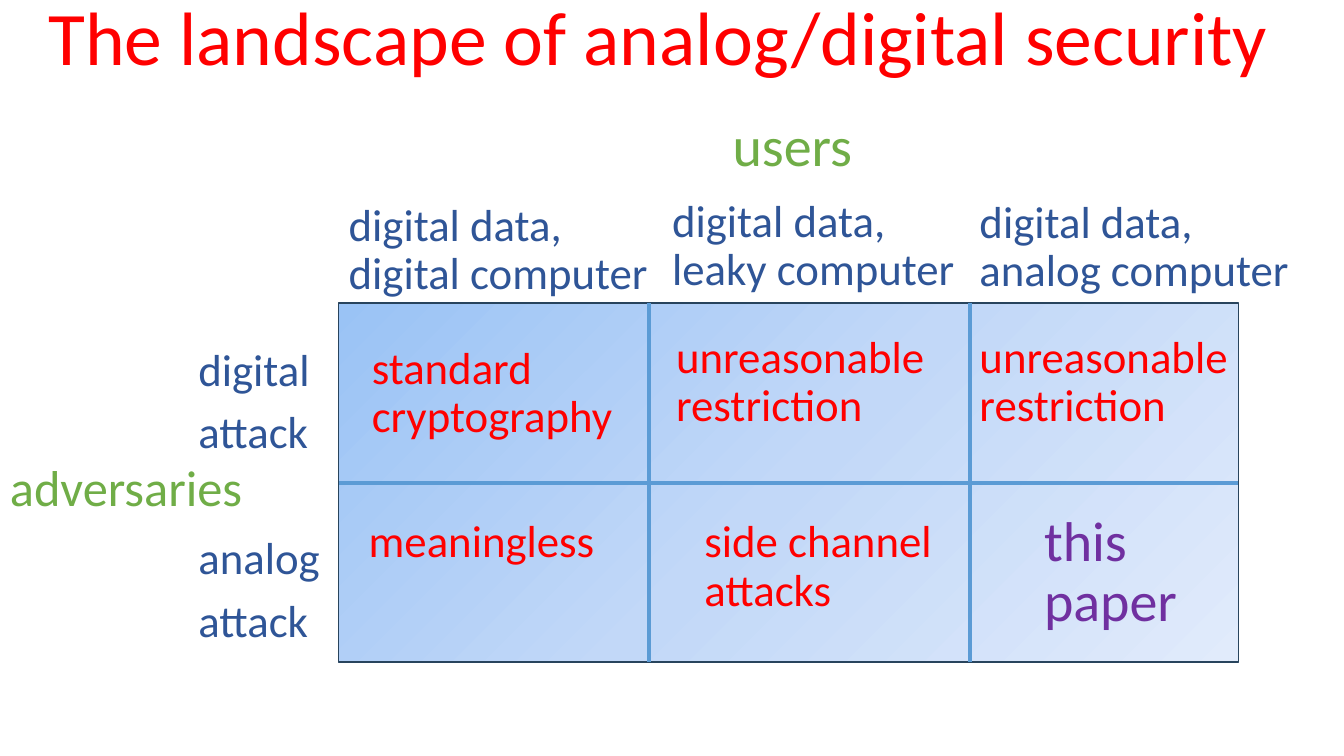
from copy import deepcopy
from dataclasses import dataclass

from lxml import etree
from pptx import Presentation
from pptx import util as u
from pptx.dml import color
from pptx.enum import shapes, text
from pptx.oxml import ns

RED, GREEN, NAVY, PURPLE = "FF0000", "70AD47", "2F5597", "7030A0"
RULE_BLUE, BORDER = "5B9BD5", "28445D"
GRADIENT = ("9AC3F5", "C2D8F8", "E1EBFB")
GRID_LEFT, GRID_TOP, GRID_WIDTH, GRID_HEIGHT = 242, 216.5, 642.5, 256.5
COLUMN_EDGES = (463.7, 692.6)


@dataclass
class Label:
    wording: str
    left: float
    top: float
    width: float
    height: float = 79
    size: float = 32
    colour: str = RED
    space_before: float = 10
    anchor: text.MSO_ANCHOR = text.MSO_ANCHOR.TOP


def rgb(code: str) -> color.RGBColor:
    return color.RGBColor.from_string(code)


def draw_label(slide, label: Label) -> None:
    box = slide.shapes.add_textbox(
        *(u.Pt(v) for v in (label.left, label.top, label.width, label.height)))
    frame = box.text_frame
    frame.word_wrap = True
    frame.vertical_anchor = label.anchor
    frame.text = label.wording
    paragraph_format = {"line_spacing": 0.9, "space_before": u.Pt(label.space_before)}
    font_format = {"name": "Calibri", "size": u.Pt(label.size)}
    for paragraph in frame.paragraphs:
        for key, value in paragraph_format.items():
            setattr(paragraph, key, value)
        for run in paragraph.runs:
            for key, value in font_format.items():
                setattr(run.font, key, value)
            run.font.color.rgb = rgb(label.colour)


def draw_grid(slide):
    grid = slide.shapes.add_shape(
        shapes.MSO_SHAPE.RECTANGLE,
        *(u.Pt(v) for v in (GRID_LEFT, GRID_TOP, GRID_WIDTH, GRID_HEIGHT)))
    grid.shadow.inherit = False
    grid.line.color.rgb = rgb(BORDER)
    grid.line.width = u.Pt(1)
    grid.fill.gradient()
    grid.fill.gradient_angle = 315
    stop_list = grid._element.spPr.find(".//" + ns.qn("a:gsLst"))
    stop_list.insert(1, deepcopy(stop_list[0]))
    for index, (stop, code) in enumerate(zip(grid.fill.gradient_stops, GRADIENT)):
        stop.position = index / 2
        stop.color.rgb = rgb(code)
    return grid


def draw_rule(slide, x1: float, y1: float, x2: float, y2: float):
    rule = slide.shapes.add_connector(
        shapes.MSO_CONNECTOR.STRAIGHT, *(u.Pt(v) for v in (x1, y1, x2, y2)))
    rule.line.color.rgb = rgb(RULE_BLUE)
    rule.line.width = u.Pt(3)
    etree.SubElement(rule._element.spPr, ns.qn("a:effectLst"))
    return rule


LABELS = (
    Label("The landscape of analog/digital security", 27.4, -14.4, 937.4, 87,
          size=54, space_before=0, anchor=text.MSO_ANCHOR.MIDDLE),
    Label("users", 516.2, 80.6, 107.3, 45, 40, GREEN),
    Label("adversaries", 0, 326.9, 187.2, 87, 36, GREEN),
    Label("digital data, digital computer", 242, 141.1, 231.1, 72, colour=NAVY),
    Label("digital data, leaky computer", 473, 138.2, 221.8, 45, colour=NAVY),
    Label("digital data, analog computer", 692.6, 139, 249.1, 45, colour=NAVY),
    Label("digital\nattack", 134.6, 244.8, 101.5, 45, colour=NAVY),
    Label("analog\nattack", 134.6, 379.4, 107.3, 45, colour=NAVY),
    Label("standard cryptography", 258.5, 243.4, 188),
    Label("unreasonable restriction", 475.9, 235.4, 199.4),
    Label("unreasonable restriction", 692.6, 235.4, 199.4),
    Label("meaningless", 256.3, 367.2, 199.4),
    Label("side channel attacks", 496.1, 367.2, 185),
    Label("this paper", 738.7, 362.9, 122.4, size=40, colour=PURPLE),
)


def main() -> None:
    deck = Presentation()
    deck.slide_width, deck.slide_height = u.Pt(960), u.Pt(540)
    slide = deck.slides.add_slide(deck.slide_layouts[6])
    grid = draw_grid(slide)
    for x in COLUMN_EDGES:
        draw_rule(slide, x, GRID_TOP, x, GRID_TOP + GRID_HEIGHT)
    middle = GRID_TOP + GRID_HEIGHT / 2
    row_rule = draw_rule(slide, GRID_LEFT, middle, GRID_LEFT + GRID_WIDTH, middle)
    row_rule.begin_connect(grid, 1)
    row_rule.end_connect(grid, 3)
    for label in LABELS:
        draw_label(slide, label)
    deck.save("out.pptx")


if __name__ == "__main__":
    main()
